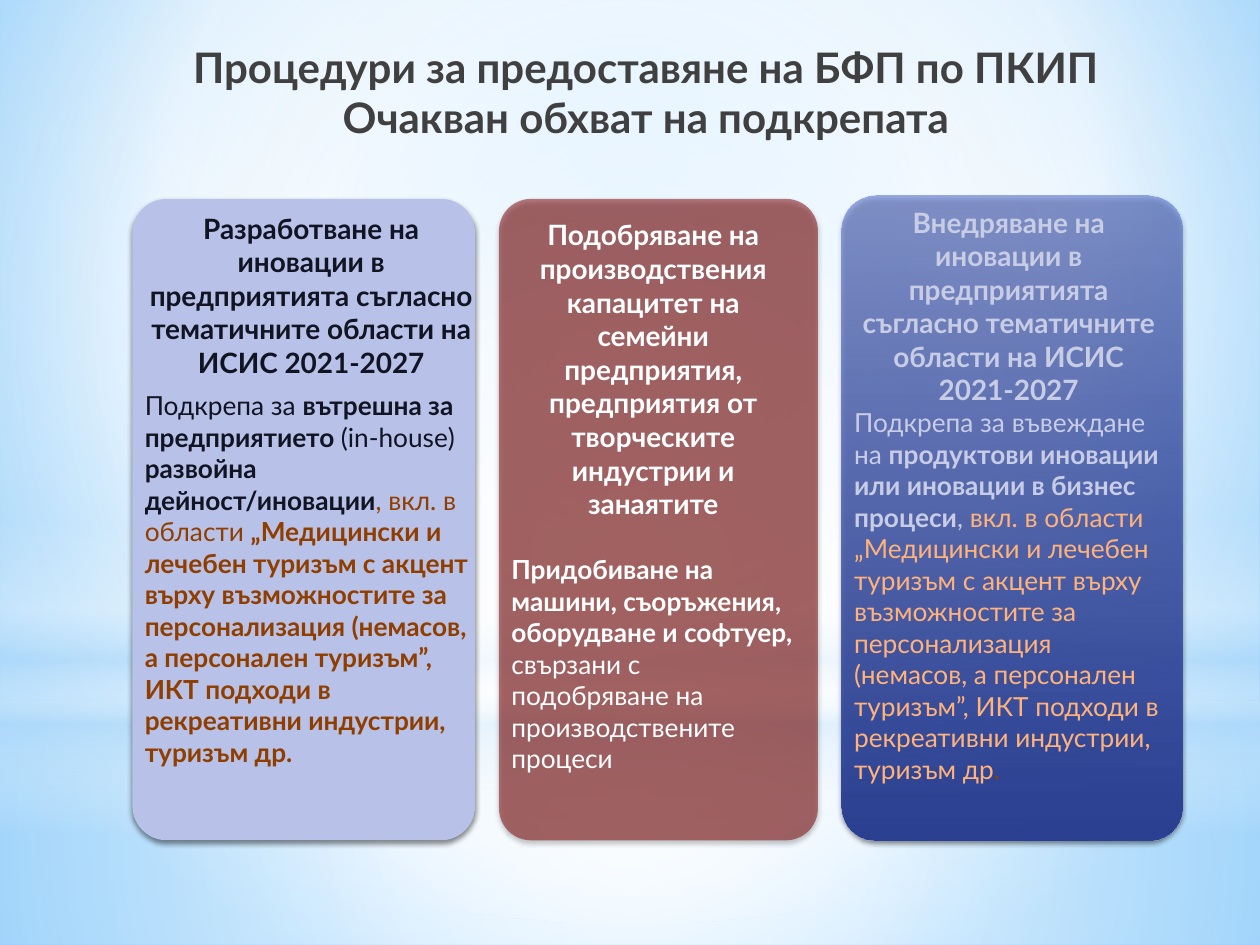
from lxml import etree
from pptx import Presentation
from pptx.dml.color import RGBColor
from pptx.enum.shapes import MSO_SHAPE as Shape
from pptx.enum.text import MSO_ANCHOR as Anchor, MSO_AUTO_SIZE as AutoSize, PP_ALIGN as Align
from pptx.oxml import parse_xml
from pptx.oxml.ns import nsdecls, qn
from pptx.util import Cm, Pt

FONT = "Lato"
WHITE = RGBColor(0xFF, 0xFF, 0xFF)
SKY = RGBColor(0xB4, 0xDC, 0xFA)
SKY_LIGHT = RGBColor(0x9E, 0xD5, 0xFF)
SKY_DEEP = RGBColor(0x5B, 0xB9, 0xFF)
CHARCOAL = RGBColor(0x40, 0x40, 0x40)
LAVENDER = RGBColor(0xB8, 0xC2, 0xE9)
MAROON = RGBColor(0x80, 0x00, 0x00)
BLUE = RGBColor(0x43, 0x5E, 0xC5)
NAVY = RGBColor(0x2B, 0x40, 0x92)
INK = RGBColor(0x11, 0x14, 0x22)
BROWN = RGBColor(0x90, 0x3E, 0x00)
PALE = RGBColor(0xC8, 0xCD, 0xE5)
PEACH = RGBColor(0xFF, 0xB3, 0x7A)


def paint_gradient(holder, stops, focus=None):
    gradient = parse_xml(f'<a:gradFill {nsdecls("a")} rotWithShape="1"><a:gsLst/></a:gradFill>')
    for position, color, alpha in stops:
        stop = etree.SubElement(gradient[0], qn("a:gs"), pos=str(position * 1000))
        tint = etree.SubElement(stop, qn("a:srgbClr"), val=str(color))
        etree.SubElement(tint, qn("a:alpha"), val=str(alpha * 1000))
    if focus:
        radial = etree.SubElement(gradient, qn("a:path"), path="circle")
        sides = {side: str(share * 1000) for side, share in zip("ltrb", focus)}
        etree.SubElement(radial, qn("a:fillToRect"), **sides)
    else:
        etree.SubElement(gradient, qn("a:lin"), ang="5400000", scaled="0")
    solid = holder.find(qn("a:solidFill"))
    holder.replace(solid, gradient)


prs = Presentation()
prs.slide_width, prs.slide_height = Cm(25.4), Cm(19.05)
slide = prs.slides.add_slide(prs.slide_layouts[5])
shapes = slide.shapes

slide.background.fill.solid()
paint_gradient(slide._element.find(".//" + qn("p:bgPr")),
               [(0, SKY_LIGHT, 100), (60, WHITE, 100), (100, SKY_DEEP, 100)], (20, 10, 20, 60))

CENTER = (50, 50, 50, 50)
glows = [
    (Shape.RECTANGLE, 14.17, 4.88, [(0, WHITE, 91), (37, WHITE, 76), (100, SKY, 79)], CENTER),
    (Shape.RECTANGLE, 0, 14.17, [(0, WHITE, 89), (48, WHITE, 62), (100, SKY, 79)], CENTER),
    (Shape.RECTANGLE, 10.46, 6.35, [(0, WHITE, 0), (29, WHITE, 30), (45, SKY, 40),
                                    (55, WHITE, 26), (65, SKY, 60), (100, WHITE, 0)], None),
    (Shape.OVAL, 4.45, 14.17, [(0, WHITE, 100), (56, WHITE, 0)], CENTER),
]
for outline, top, height, stops, focus in glows:
    glow = shapes.add_shape(outline, 0, Cm(top), prs.slide_width, Cm(height))
    glow.shadow.inherit = False
    glow.line.fill.background()
    glow.fill.solid()
    paint_gradient(glow._element.spPr, stops, focus)

title = shapes.title
shapes._spTree.append(title._element)
title.left, title.top, title.width, title.height = Cm(1.27), Cm(0.71), Cm(23.5), Cm(1.78)
title.text_frame.text = "Процедури за предоставяне на БФП по ПКИП\vОчакван обхват на подкрепата"
title.text_frame.auto_size = AutoSize.NONE
title.text_frame.vertical_anchor = Anchor.TOP
heading = title.text_frame.paragraphs[0]
heading.alignment = Align.CENTER
heading.font.name, heading.font.size, heading.font.bold = FONT, Pt(24), True
heading.font.color.rgb = CHARCOAL

TOURISM = ("„Медицински и лечебен туризъм с акцент върху възможностите за персонализация "
           "(немасов, а персонален туризъм”, ИКТ подходи в рекреативни индустрии, туризъм др")
cards = [
    ((2.67, 4.01, 6.91, 12.93), [(0, LAVENDER, 100), (100, LAVENDER, 100)],
     (2.67, 4.13, 7.21, 13.26), INK,
     ["Разработване на иновации в предприятията съгласно тематичните области на ИСИС 2021-2027"],
     6, [("Подкрепа за ", False, INK), ("вътрешна за предприятието ", True, INK),
         ("(in-house) ", False, INK), ("развойна дейност/иновации", True, INK),
         (", вкл. в области ", False, BROWN), (TOURISM + ".", True, BROWN)]),
    ((10.06, 4.01, 6.43, 12.93), [(0, MAROON, 50), (100, MAROON, 50)],
     (10.06, 4.27, 6.22, 12.22), WHITE,
     ["Подобряване на производствения капацитет на семейни предприятия, "
      "предприятия от творческите индустрии и занаятите"],
     19, [("Придобиване на машини, съоръжения, оборудване и софтуер, ", True, WHITE),
          ("свързани с подобряване на производствените процеси", False, WHITE)]),
    ((16.97, 3.94, 6.87, 13), [(0, BLUE, 50), (100, NAVY, 100)],
     (16.97, 4.01, 6.73, 12.7), PALE,
     ["Внедряване на иновации в предприятията съгласно тематичните области на ИСИС", "2021-2027"],
     0, [("Подкрепа за въвеждане на ", False, PALE),
         ("продуктови иновации или иновации в бизнес процеси", True, PALE),
         (", ", False, PALE), ("вкл. в области " + TOURISM, False, PEACH), (".", False, BROWN)]),
]
for panel_box, stops, text_box, ink, headings, gap, details in cards:
    panel = shapes.add_shape(Shape.ROUNDED_RECTANGLE, *map(Cm, panel_box))
    panel.adjustments[0] = 0.1
    panel.line.fill.background()
    panel.fill.solid()
    paint_gradient(panel._element.spPr, stops)
    panel._element.spPr.append(parse_xml(
        f'<a:effectLst {nsdecls("a")}><a:outerShdw blurRad="{Pt(3.1)}" dist="{Pt(1.8)}" '
        'dir="5400000" rotWithShape="0"><a:srgbClr val="000000"><a:alpha val="45000"/>'
        '</a:srgbClr></a:outerShdw></a:effectLst>'))

    frame = shapes.add_textbox(*map(Cm, text_box)).text_frame
    frame.word_wrap = True
    for text in headings:
        topic = frame.paragraphs[0] if text == headings[0] else frame.add_paragraph()
        topic.text = text
        topic.alignment = Align.CENTER
        topic.font.name, topic.font.size, topic.font.bold = FONT, Pt(16), True
        topic.font.color.rgb = ink
    support = frame.add_paragraph()
    support.space_before = Pt(gap)
    support.font.name, support.font.size = FONT, Pt(15)
    for text, bold, color in details:
        phrase = support.add_run()
        phrase.text = text
        phrase.font.bold = bold
        phrase.font.color.rgb = color

prs.save("out.pptx")
